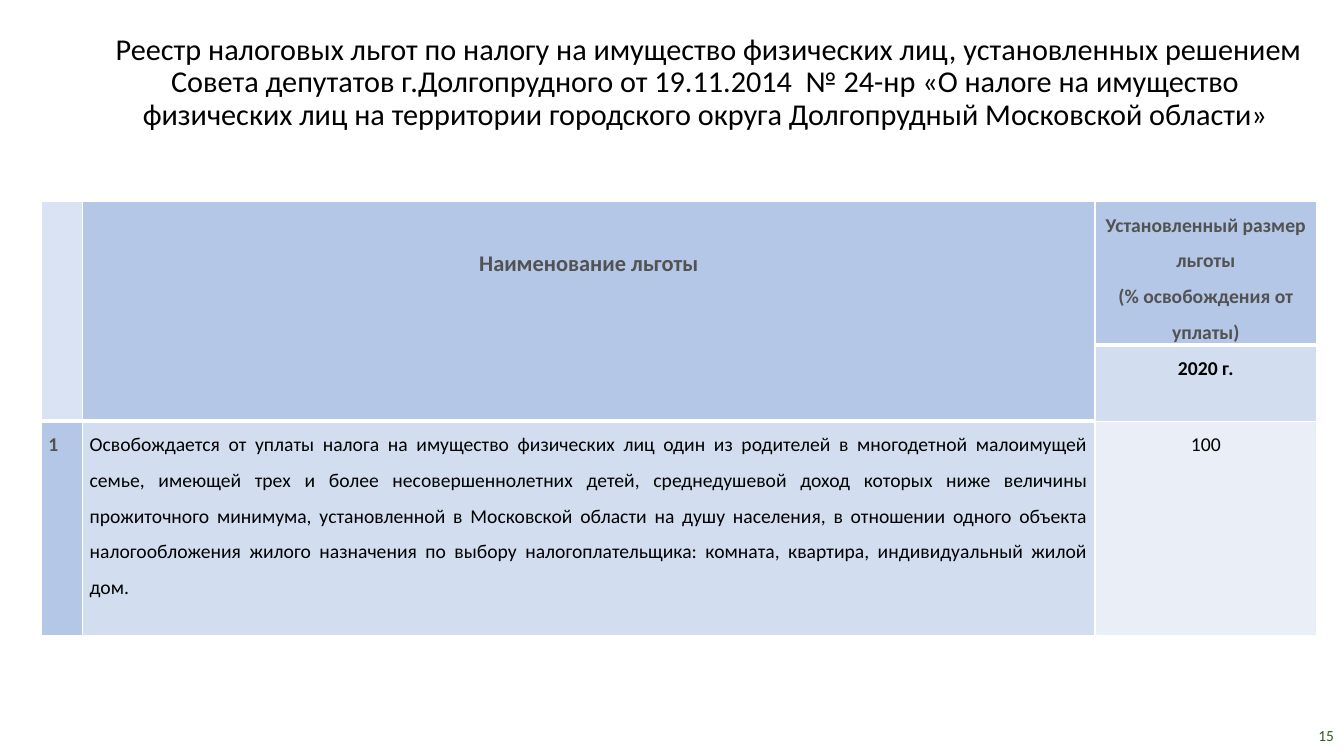
import pptx
import pptx.dml.color
import pptx.enum.text
import pptx.oxml
import pptx.oxml.ns
import pptx.util
from pptx.util import Inches

ALIGN = pptx.enum.text.PP_ALIGN
ANCHOR = pptx.enum.text.MSO_ANCHOR

# Content
TITLE = (" Реестр налоговых льгот по налогу на имущество физических лиц, установленных решением "
         "Совета депутатов г.Долгопрудного от 19.11.2014  № 24-нр «О налоге на имущество "
         "физических лиц на территории городского округа Долгопрудный Московской области»")
BENEFIT = ("Освобождается от уплаты налога на имущество физических лиц один из родителей в "
           "многодетной малоимущей семье, имеющей трех и более несовершеннолетних детей, "
           "среднедушевой доход которых ниже величины прожиточного минимума, установленной в "
           "Московской области на душу населения, в отношении одного объекта налогообложения "
           "жилого назначения по выбору налогоплательщика: комната, квартира, индивидуальный "
           "жилой дом.")
PAGE_NUMBER = "15"

BLACK, GREY, GREEN, WHITE = "000000", "525252", "385723", "FFFFFF"
HEADER_FILL = "B4C7E7"
COLUMN_WIDTHS = (0.41, 10.04, 2.2)
ROW_HEIGHTS = (1.42, 0.75, 2.13)

# (row, column): fill, paragraphs, text format
CELLS = {
    (0, 0): ("DAE3F3", [], {}),
    (0, 1): (HEADER_FILL, ["Наименование льготы"], dict(size=16, color=GREY, bold=True)),
    (0, 2): (HEADER_FILL, ["Установленный размер льготы", "(% освобождения от уплаты)"],
             dict(color=GREY, bold=True)),
    (1, 2): ("D2DEEF", ["2020 г."], dict(bold=True)),
    (2, 0): (HEADER_FILL, ["1"], dict(color=GREY, bold=True, align=ALIGN.LEFT)),
    (2, 1): ("D2DEEF", [BENEFIT], dict(align=ALIGN.JUSTIFY)),
    (2, 2): ("EAEFF7", ["100"], {}),
}


def rgb(value):
    return pptx.dml.color.RGBColor.from_string(value)


def write(frame, lines, size=14, color=BLACK, bold=False, align=ALIGN.CENTER, spacing=1.5):
    frame.word_wrap = True
    for index, line in enumerate(lines):
        para = frame.paragraphs[0] if index == 0 else frame.add_paragraph()
        para.alignment = align
        para.line_spacing = spacing
        span = para.add_run()
        span.text = line
        span.font.name = "Calibri"
        span.font.size = pptx.util.Pt(size)
        span.font.bold = bold
        span.font.color.rgb = rgb(color)


def set_borders(cell, bottom):
    properties = cell._tc.get_or_add_tcPr()
    for side, points in (("L", 1), ("R", 1), ("T", 1), ("B", bottom)):
        properties.append(pptx.oxml.parse_xml(
            f'<a:ln{side} {pptx.oxml.ns.nsdecls("a")} w="{pptx.util.Pt(points)}">'
            f'<a:solidFill><a:srgbClr val="{WHITE}"/></a:solidFill></a:ln{side}>'))


def add_title(page):
    title = page.shapes.title
    title.left, title.top = Inches(0.93), Inches(0.21)
    title.width, title.height = Inches(12.13), Inches(1.23)
    title.text_frame.auto_size = pptx.enum.text.MSO_AUTO_SIZE.NONE
    title.text_frame.vertical_anchor = ANCHOR.MIDDLE
    write(title.text_frame, [TITLE], size=21.6, spacing=0.9)


def add_benefits(page):
    table = page.shapes.add_table(
        len(ROW_HEIGHTS), len(COLUMN_WIDTHS), Inches(0.41), Inches(2),
        Inches(sum(COLUMN_WIDTHS)), Inches(sum(ROW_HEIGHTS))).table
    for column, width in zip(table.columns, COLUMN_WIDTHS):
        column.width = Inches(width)
    for row, height in zip(table.rows, ROW_HEIGHTS):
        row.height = Inches(height)

    # Borders: a thick line under every header cell
    for row in range(len(ROW_HEIGHTS)):
        for column in range(len(COLUMN_WIDTHS)):
            header = row == 0 or (row == 1 and column < 2)
            set_borders(table.cell(row, column), 3 if header else 1)
    for column in (0, 1):
        table.cell(0, column).merge(table.cell(1, column))

    # Cell fills and text
    for (row, column), (fill, lines, text_format) in CELLS.items():
        cell = table.cell(row, column)
        cell.fill.solid()
        cell.fill.fore_color.rgb = rgb(fill)
        cell.margin_left = cell.margin_right = Inches(0.07)
        cell.margin_top = cell.margin_bottom = 0
        write(cell.text_frame, lines, **text_format)
    table.cell(0, 1).margin_top = Inches(0.35)


def add_page_number(page):
    box = page.shapes.add_textbox(Inches(11.9), Inches(7.1), Inches(1.43), Inches(0.4))
    box.text_frame.vertical_anchor = ANCHOR.MIDDLE
    write(box.text_frame, [PAGE_NUMBER], size=11, color=GREEN, align=ALIGN.RIGHT, spacing=1.0)


def main():
    deck = pptx.Presentation()
    deck.slide_width, deck.slide_height = Inches(13.33), Inches(7.5)
    page = deck.slides.add_slide(deck.slide_layouts[5])
    add_title(page)
    add_benefits(page)
    add_page_number(page)
    deck.save("out.pptx")


if __name__ == "__main__":
    main()
